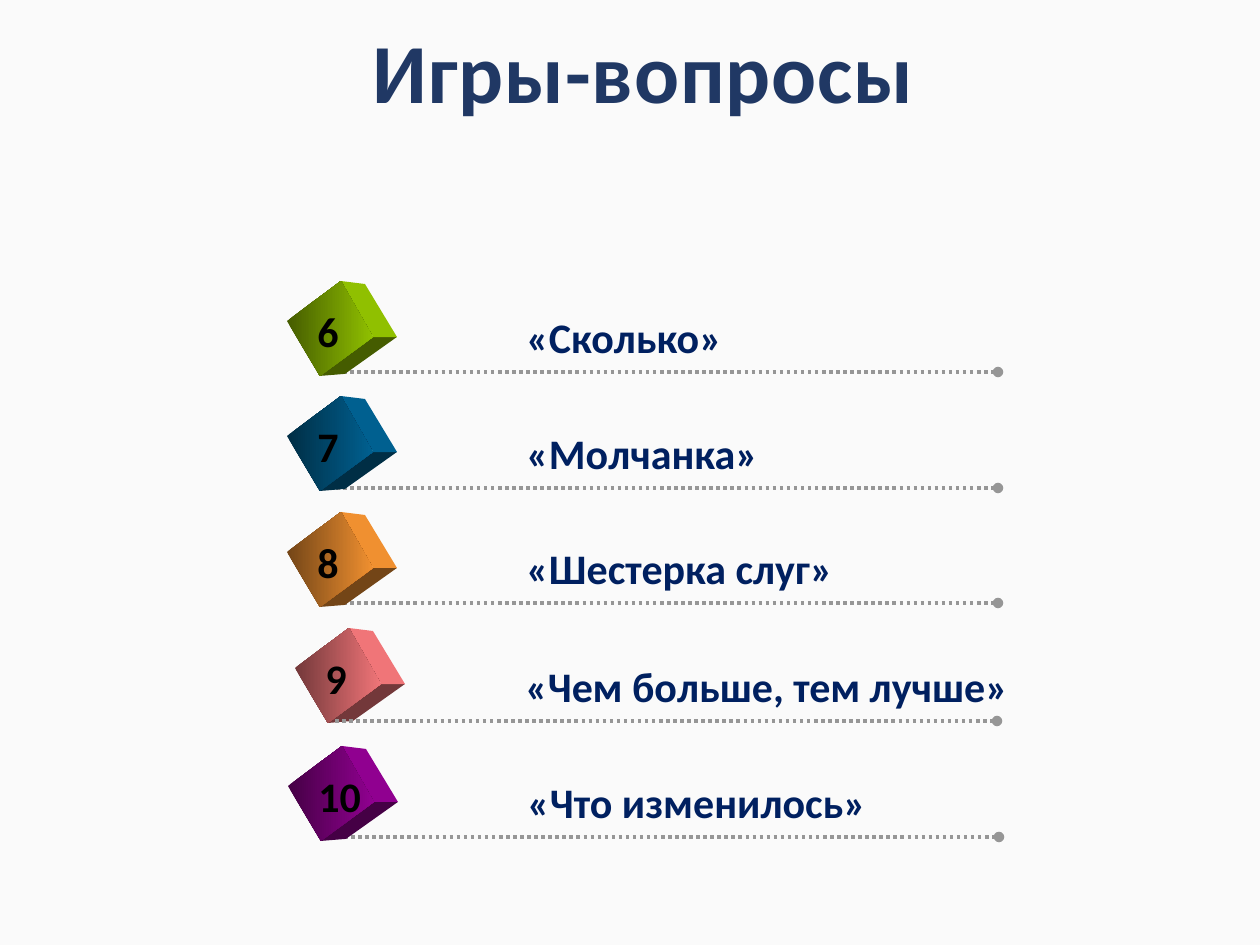
from dataclasses import dataclass

from lxml import etree
from pptx import Presentation, util as u
from pptx.dml.color import RGBColor
from pptx.enum import dml, shapes, text
from pptx.oxml.ns import qn

EMU = 914400 / 126
FRONT = [(0, 40), (54, 0), (86, 56), (33, 95)]
SIDE = [(54, 0), (78, 3), (110, 56), (86, 56)]
BASE = [(33, 95), (86, 56), (110, 56), (58, 93)]


@dataclass
class Row:
    num: str
    name: str
    hue: str
    left: int
    line: int
    cube: tuple[int, int]
    wide: int
    on_top: bool = False


ROWS = [
    Row("6", "«Сколько»", "99CC00", 336, 372, (287, 281), 222),
    Row("7", "«Молчанка»", "006699", 336, 488, (287, 396), 268),
    Row("8", "«Шестерка слуг»", "FF9933", 336, 603, (287, 512), 344),
    Row("9", "«Чем больше, тем лучше»", "FF7C80", 335, 721, (295, 628), 513, True),
    Row("10", "«Что изменилось»", "990099", 337, 837, (288, 746), 368),
]


def px(n: float) -> int:
    return round(n * EMU)


def rgb(hue: str) -> RGBColor:
    return RGBColor.from_string(hue)


def shade(hue: str, part: float) -> str:
    return "".join(f"{round(int(hue[i:i + 2], 16) * part):02X}" for i in (0, 2, 4))


def label(slide, words: str, box: tuple, size: int, hue: str):
    frame = slide.shapes.add_textbox(*map(px, box)).text_frame
    frame.word_wrap = False
    frame.text = words
    font = frame.paragraphs[0].runs[0].font
    font.name, font.size, font.bold = "Calibri", u.Pt(size), True
    font.color.rgb = rgb(hue)
    return frame


def face(slide, at: tuple, points: list, hue: str, end: str = ""):
    spots = [(at[0] + x, at[1] + y) for x, y in points]
    pen = slide.shapes.build_freeform(*spots[0], scale=EMU)
    pen.add_line_segments(spots[1:], close=True)
    shape = pen.convert_to_shape()
    shape.shadow.inherit = False
    shape.line.fill.background()
    if end:
        shape.fill.gradient()
        shape.fill.gradient_angle = 0
        for stop, tone in zip(shape.fill.gradient_stops, (hue, end)):
            stop.color.rgb = rgb(tone)
    else:
        shape.fill.solid()
        shape.fill.fore_color.rgb = rgb(hue)


def cube(slide, row: Row):
    lit, dark = shade(row.hue, 0.94), shade(row.hue, 0.45)
    face(slide, row.cube, BASE, dark)
    face(slide, row.cube, SIDE, lit)
    face(slide, row.cube, FRONT, dark, lit)


def rule(slide, row: Row):
    y = px(row.line)
    line = slide.shapes.add_connector(
        shapes.MSO_CONNECTOR.STRAIGHT, px(row.left), y, px(row.left + 662), y)
    line.line.color.rgb = rgb("969696")
    line.line.width = u.Pt(2)
    line.line.dash_style = dml.MSO_LINE.ROUND_DOT
    props = line._element.spPr
    etree.SubElement(props.find(qn("a:ln")), qn("a:tailEnd"), type="oval")
    etree.SubElement(props, qn("a:effectLst"))


def entry(slide, row: Row):
    steps = [rule, cube]
    for step in reversed(steps) if row.on_top else steps:
        step(slide, row)
    label(slide, row.name, (row.left + 178, row.line - 67, row.wide, 64), 24, "002060")
    wide = 47 if len(row.num) == 1 else 68
    label(slide, row.num, (row.cube[0] + 18, row.cube[1] + 18, wide, 64), 24, "000000")


def main():
    deck = Presentation()
    deck.slide_width, deck.slide_height = px(1260), px(945)
    slide = deck.slides.add_slide(deck.slide_layouts[6])
    slide.background.fill.solid()
    slide.background.fill.fore_color.rgb = rgb("FAFAFA")
    title = label(slide, "Игры-вопросы", (306, 21, 675, 110), 48, "203864")
    title.word_wrap = True
    title.vertical_anchor = text.MSO_ANCHOR.MIDDLE
    para = title.paragraphs[0]
    para.alignment = text.PP_ALIGN.CENTER
    para.line_spacing = 0.9
    para.runs[0]._r.get_or_add_rPr().set("spc", "50")
    for row in ROWS:
        entry(slide, row)
    deck.save("out.pptx")


if __name__ == "__main__":
    main()
